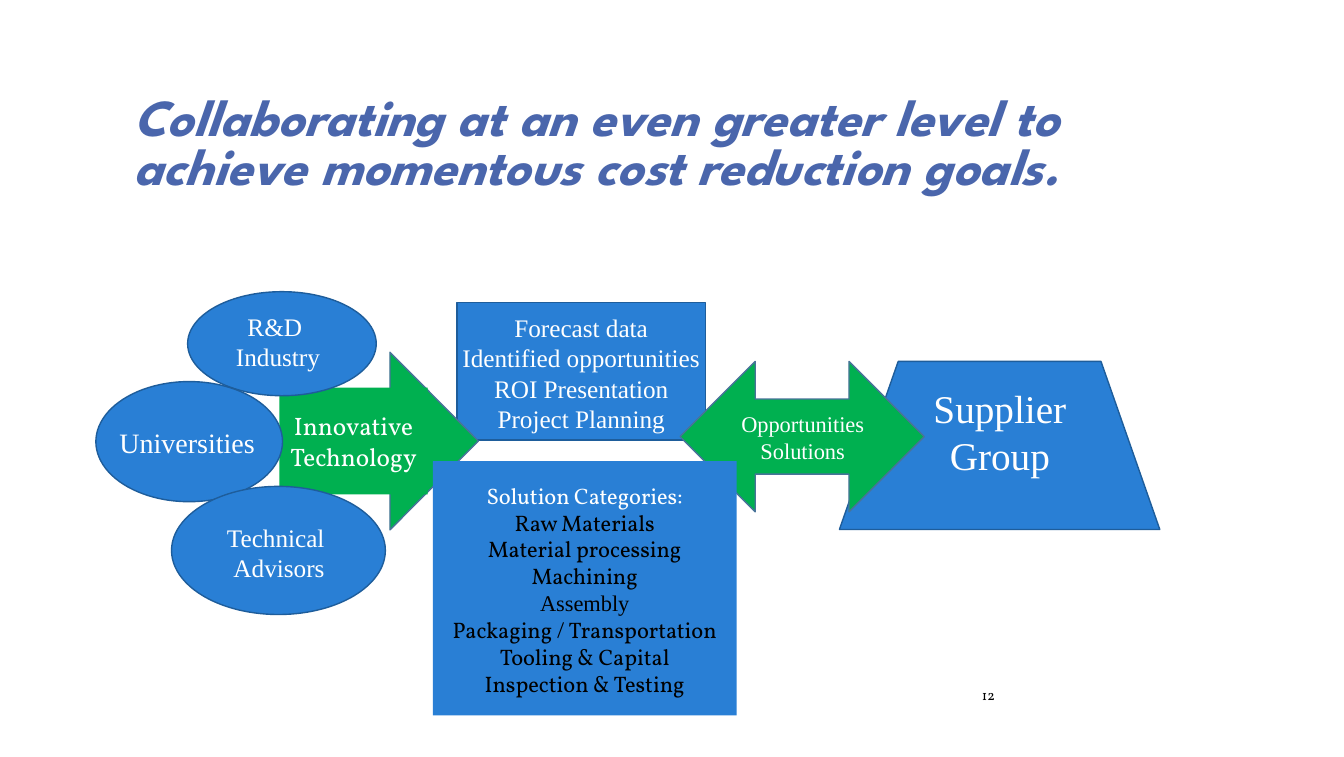
from dataclasses import dataclass

from pptx import Presentation
from pptx.dml.color import RGBColor
from pptx.enum.shapes import MSO_SHAPE
from pptx.enum.text import MSO_ANCHOR, MSO_AUTO_SIZE, PP_ALIGN
from pptx.shapes.autoshape import Shape
from pptx.slide import Slide
from pptx.util import Pt

RECTANGLE = MSO_SHAPE.RECTANGLE
OVAL = MSO_SHAPE.OVAL
TRAPEZOID = MSO_SHAPE.TRAPEZOID
RIGHT_ARROW = MSO_SHAPE.RIGHT_ARROW
TWO_WAY_ARROW = MSO_SHAPE.LEFT_RIGHT_ARROW
MIDDLE, BOTTOM = MSO_ANCHOR.MIDDLE, MSO_ANCHOR.BOTTOM
CENTER, RIGHT = PP_ALIGN.CENTER, PP_ALIGN.RIGHT
NO_AUTOFIT = MSO_AUTO_SIZE.NONE

Box = tuple[float, float, float, float]


@dataclass(frozen=True)
class Theme:
    blue: str = "297FD5"
    blue_edge: str = "1E5D9B"
    green: str = "00B050"
    green_edge: str = "487399"
    heading: str = "4A66AC"
    white: str = "FFFFFF"
    black: str = "000000"
    heading_font: str = "League Spartan"
    serif: str = "Times New Roman"
    accent_font: str = "Vollkorn"
    title_size: int = 37
    group_size: int = 28
    large: int = 20
    body: int = 18
    small: int = 16
    number_size: int = 10
    inset: float = 3.6


THEME = Theme()


@dataclass(frozen=True)
class Block:
    kind: MSO_SHAPE
    box: Box
    fill: str
    edge: str | None = None
    adjustment: float | None = None


@dataclass(frozen=True)
class Line:
    words: str
    size: int = THEME.body
    font: str = THEME.serif
    color: str = THEME.white
    bold: bool = False
    italic: bool = False


@dataclass(frozen=True)
class Label:
    box: Box
    lines: list[Line]
    align: PP_ALIGN = CENTER
    wrap: bool = True


# Text content
TITLE = Line("Collaborating at an even greater level to achieve momentous cost reduction goals.",
             THEME.title_size, THEME.heading_font, THEME.heading, True, True)
TITLE_BOX = (41.8, 5.8, 767.5, 137.5)
PLANNING = ["Forecast data", "Identified opportunities", "ROI Presentation", "Project Planning"]
CATEGORIES = ["Raw Materials", "Material processing", "Machining", "Assembly",
              "Packaging / Transportation", "Tooling & Capital", "Inspection & Testing"]


def category_line(name: str) -> Line:
    font = THEME.serif if name == "Assembly" else THEME.accent_font
    return Line(name, THEME.small, font, THEME.black)


# Diagram parts, from back to front
DIAGRAM = [
    # Planning data
    Block(RECTANGLE, (326.2, 216, 177.1, 97.9), THEME.blue, THEME.blue_edge),
    Label((326.2, 218.9, 177.1, 94.3), [Line(topic) for topic in PLANNING]),
    # Page number
    Label((695.5, 486.7, 18, 18),
          [Line("12", THEME.number_size, THEME.accent_font, THEME.black)], RIGHT, False),
    # Technology arrow
    Block(RIGHT_ARROW, (215.3, 251.3, 126, 126.7), THEME.green, THEME.green_edge),
    Block(RECTANGLE, (199.4, 276.5, 105.8, 76.3), THEME.green),
    Label((199.4, 276.5, 105.8, 76.3),
          [Line("Innovative Technology", font=THEME.accent_font)]),
    # Sources of technology
    Block(OVAL, (133.9, 208.1, 134.6, 74.2), THEME.blue, THEME.blue_edge),
    Label((133.9, 218.2, 128.9, 51.1), [Line("R&D "), Line("Industry")]),
    Block(OVAL, (68.4, 272.2, 133.2, 85.7), THEME.blue, THEME.blue_edge),
    Label((65.5, 299.5, 136.1, 31.7), [Line("Universities", THEME.large)]),
    # Suppliers and the exchange with them
    Block(TRAPEZOID, (599, 257.8, 228.6, 119.9), THEME.blue, THEME.blue_edge, 0.35),
    Label((627.1, 270, 172.8, 74.9), [Line("Supplier Group", THEME.group_size)]),
    Block(TWO_WAY_ARROW, (485.3, 257.8, 174.2, 107.3), THEME.green, THEME.green_edge),
    Block(RECTANGLE, (509.8, 288.7, 126, 46.1), THEME.green),
    Label((509.8, 288.7, 126, 46.1),
          [Line("Opportunities", THEME.small), Line("Solutions", THEME.small)]),
    # Advisors
    Block(OVAL, (122.4, 347, 152.6, 91.4), THEME.blue, THEME.blue_edge),
    Label((122.4, 349.2, 153.4, 89.3), [Line("Technical "), Line("Advisors")]),
    # Solution categories
    Block(RECTANGLE, (308.9, 329, 216.7, 181.4), THEME.blue),
    Label((308.9, 339.1, 216.7, 162.7),
          [Line("Solution Categories:", THEME.small, THEME.accent_font),
           *map(category_line, CATEGORIES)]),
]


def set_all(target: object, values: dict[str, object]) -> None:
    for name, value in values.items():
        setattr(target, name, value)


def write(holder: Shape, lines: list[Line], align: PP_ALIGN = CENTER,
          anchor: MSO_ANCHOR = MIDDLE, wrap: bool = True, spacing: float = 1.0) -> None:
    frame = holder.text_frame
    inset = Pt(THEME.inset)
    set_all(frame, {"word_wrap": wrap, "auto_size": NO_AUTOFIT, "vertical_anchor": anchor,
                    "margin_left": inset, "margin_right": inset,
                    "margin_top": inset, "margin_bottom": inset})
    for index, line in enumerate(lines):
        paragraph = frame.add_paragraph() if index else frame.paragraphs[0]
        set_all(paragraph, {"alignment": align, "line_spacing": spacing})
        run = paragraph.add_run()
        run.text = line.words
        set_all(run.font, {"name": line.font, "size": Pt(line.size),
                           "bold": line.bold, "italic": line.italic})
        run.font.color.rgb = RGBColor.from_string(line.color)


def draw_block(slide: Slide, block: Block) -> None:
    shape = slide.shapes.add_shape(block.kind, *map(Pt, block.box))
    shape.shadow.inherit = False
    shape.fill.solid()
    shape.fill.fore_color.rgb = RGBColor.from_string(block.fill)
    if block.edge:
        shape.line.color.rgb = RGBColor.from_string(block.edge)
        shape.line.width = Pt(1)
    else:
        shape.line.fill.background()
    if block.adjustment is not None:
        shape.adjustments[0] = block.adjustment


def draw_label(slide: Slide, label: Label) -> None:
    holder = slide.shapes.add_textbox(*map(Pt, label.box))
    write(holder, label.lines, label.align, wrap=label.wrap)


def draw_title(slide: Slide) -> None:
    title = slide.shapes.title
    set_all(title, dict(zip(("left", "top", "width", "height"), map(Pt, TITLE_BOX))))
    write(title, [TITLE], anchor=BOTTOM, spacing=0.8)


def main() -> None:
    deck = Presentation()
    set_all(deck, {"slide_width": Pt(959.04), "slide_height": Pt(540)})
    slide = deck.slides.add_slide(deck.slide_layouts.get_by_name("Title Only"))
    draw_title(slide)
    for part in DIAGRAM:
        if isinstance(part, Block):
            draw_block(slide, part)
        else:
            draw_label(slide, part)
    deck.save("out.pptx")


if __name__ == "__main__":
    main()
